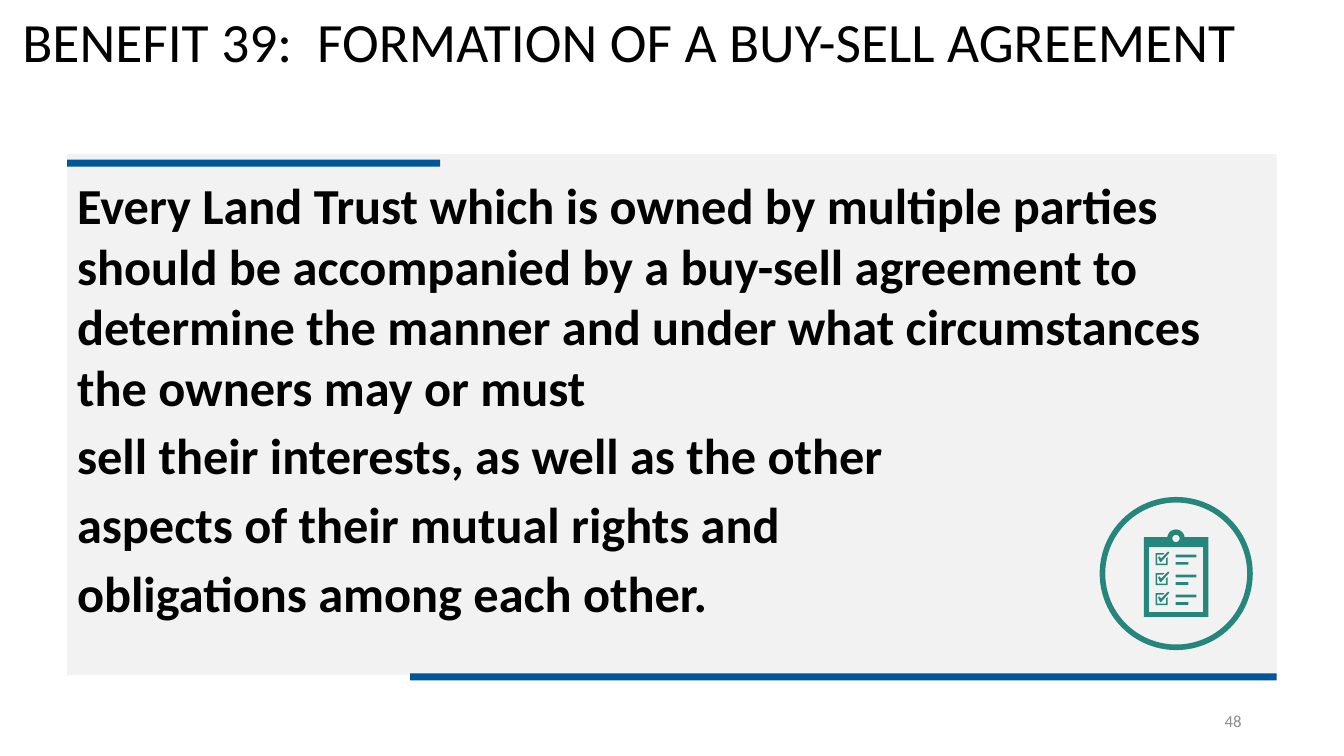
import math

from pptx import Presentation
from pptx.dml.color import RGBColor
from pptx.enum.shapes import MSO_SHAPE
from pptx.enum.text import MSO_ANCHOR, PP_ALIGN
from pptx.util import Pt

RECTANGLE = MSO_SHAPE.RECTANGLE
OVAL = MSO_SHAPE.OVAL
TOP = MSO_ANCHOR.TOP
MIDDLE = MSO_ANCHOR.MIDDLE
LEFT = PP_ALIGN.LEFT
RIGHT = PP_ALIGN.RIGHT

BLACK = RGBColor(0x00, 0x00, 0x00)
GRAY = RGBColor(0x8C, 0x8C, 0x8C)
PANEL = RGBColor(0xF2, 0xF2, 0xF2)
BLUE = RGBColor(0x00, 0x56, 0x9B)
TEAL = RGBColor(0x26, 0x86, 0x7C)

PARAGRAPHS = [
    "Every Land Trust which is owned by multiple parties should be accompanied "
    "by a buy-sell agreement to determine the manner and under what "
    "circumstances the owners may or must",
    "sell their interests, as well as the other",
    "aspects of their mutual rights and",
    "obligations among each other.",
]
CHECK_BOX = [(0, 0), (6.5, 0), (5.4, 1.1), (1.1, 1.1), (1.1, 7.6),
             (7.5, 7.6), (7.5, 4), (8.6, 2.9), (8.6, 8.7), (0, 8.7)]
CHECK_MARK = [(9.1, -1.1), (4, 3.9), (2.8, 2.4), (1.9, 3.3),
              (3.3, 6.4), (4, 6.4), (9.9, -0.2)]


def arc(x, y, radius, start, end, steps=24):
    angles = [math.radians(start + (end - start) * step / steps)
              for step in range(steps + 1)]
    return [(x + radius * math.cos(angle), y + radius * math.sin(angle))
            for angle in angles]


class SlideBuilder:
    font = "Calibri"
    units = 100

    def __init__(self, page):
        self.page = page
        self.canvas = page.shapes

    def start_group(self):
        self.canvas = self.page.shapes.add_group_shape().shapes

    def fill_text(self, shape, lines, size, color, bold=False, align=LEFT,
                  anchor=MIDDLE, top_inset=3.6, line_spacing=1.0, gap=0):
        frame = shape.text_frame
        frame.word_wrap = True
        frame.vertical_anchor = anchor
        frame.margin_left = frame.margin_right = Pt(7.2)
        frame.margin_top, frame.margin_bottom = Pt(top_inset), Pt(3.6)
        for index, line in enumerate(lines):
            para = frame.add_paragraph() if index else frame.paragraphs[0]
            para.alignment = align
            para.line_spacing = line_spacing
            para.space_before = Pt(gap if index else 0)
            span = para.add_run()
            span.text = line
            span.font.name = self.font
            span.font.size = Pt(size)
            span.font.bold = bold
            span.font.color.rgb = color

    def text(self, left, top, width, height, lines, size, color, **style):
        box = self.canvas.add_textbox(Pt(left), Pt(top), Pt(width), Pt(height))
        self.fill_text(box, lines, size, color, **style)

    def block(self, left, top, width, height, color):
        shape = self.canvas.add_shape(
            RECTANGLE, Pt(left), Pt(top), Pt(width), Pt(height))
        self.paint(shape, color)
        return shape

    def ring(self, left, top, size, color, weight):
        shape = self.canvas.add_shape(
            OVAL, Pt(left), Pt(top), Pt(size), Pt(size))
        shape.shadow.inherit = False
        shape.fill.background()
        shape.line.color.rgb = color
        shape.line.width = Pt(weight)

    def outline(self, contours, color, left=0, top=0):
        scaled = [[((left + x) * self.units, (top + y) * self.units)
                   for x, y in contour] for contour in contours]
        builder = self.canvas.build_freeform(
            *scaled[0][0], scale=Pt(1) / self.units)
        builder.add_line_segments(scaled[0][1:], close=True)
        for contour in scaled[1:]:
            builder.move_to(*contour[0])
            builder.add_line_segments(contour[1:], close=True)
        self.paint(builder.convert_to_shape(), color)

    def paint(self, shape, color):
        shape.shadow.inherit = False
        shape.fill.solid()
        shape.fill.fore_color.rgb = color
        shape.line.fill.background()

    def clipboard(self):
        self.start_group()
        for row in range(3):
            top = 395 + row * 14.3
            self.outline([CHECK_MARK], TEAL, 825.4, top)
            self.outline([CHECK_BOX], TEAL, 825.4, top)
            self.block(839.8, top + 1.2, 14.7, 1.9, TEAL)
            self.block(839.8, top + 6.5, 9.1, 1.9, TEAL)
        board = [(817.1, 383.7), *arc(840, 384.4, 6.2, 187, 353),
                 (863.1, 383.7), (863.1, 440.7), (817.1, 440.7)]
        hole = arc(840, 384.6, 2.6, 360, 0)
        sheet = [(820.6, 390.8), (820.6, 437.2), (859.4, 437.2), (859.4, 390.8)]
        self.outline([board, hole, sheet], TEAL)


def main():
    deck = Presentation()
    deck.slide_width, deck.slide_height = Pt(960), Pt(540)
    page = deck.slides.add_slide(deck.slide_layouts[6])
    builder = SlideBuilder(page)
    builder.text(0, 0, 946, 64,
                 [" BENEFIT 39:  FORMATION OF A BUY-SELL AGREEMENT"],
                 39.6, BLACK, line_spacing=0.9)
    builder.text(678, 500.5, 216, 28.8, ["48"], 12, GRAY, align=RIGHT)
    panel = builder.block(48, 110, 864, 372, PANEL)
    builder.fill_text(panel, PARAGRAPHS, 36, BLACK, bold=True, anchor=TOP,
                      top_inset=14.4, gap=6)
    builder.block(293, 481, 619, 5, BLUE)
    builder.block(48, 114, 266.4, 5, BLUE)
    builder.ring(787.5, 357, 105.4, TEAL, 4)
    builder.clipboard()
    deck.save("out.pptx")


if __name__ == "__main__":
    main()
